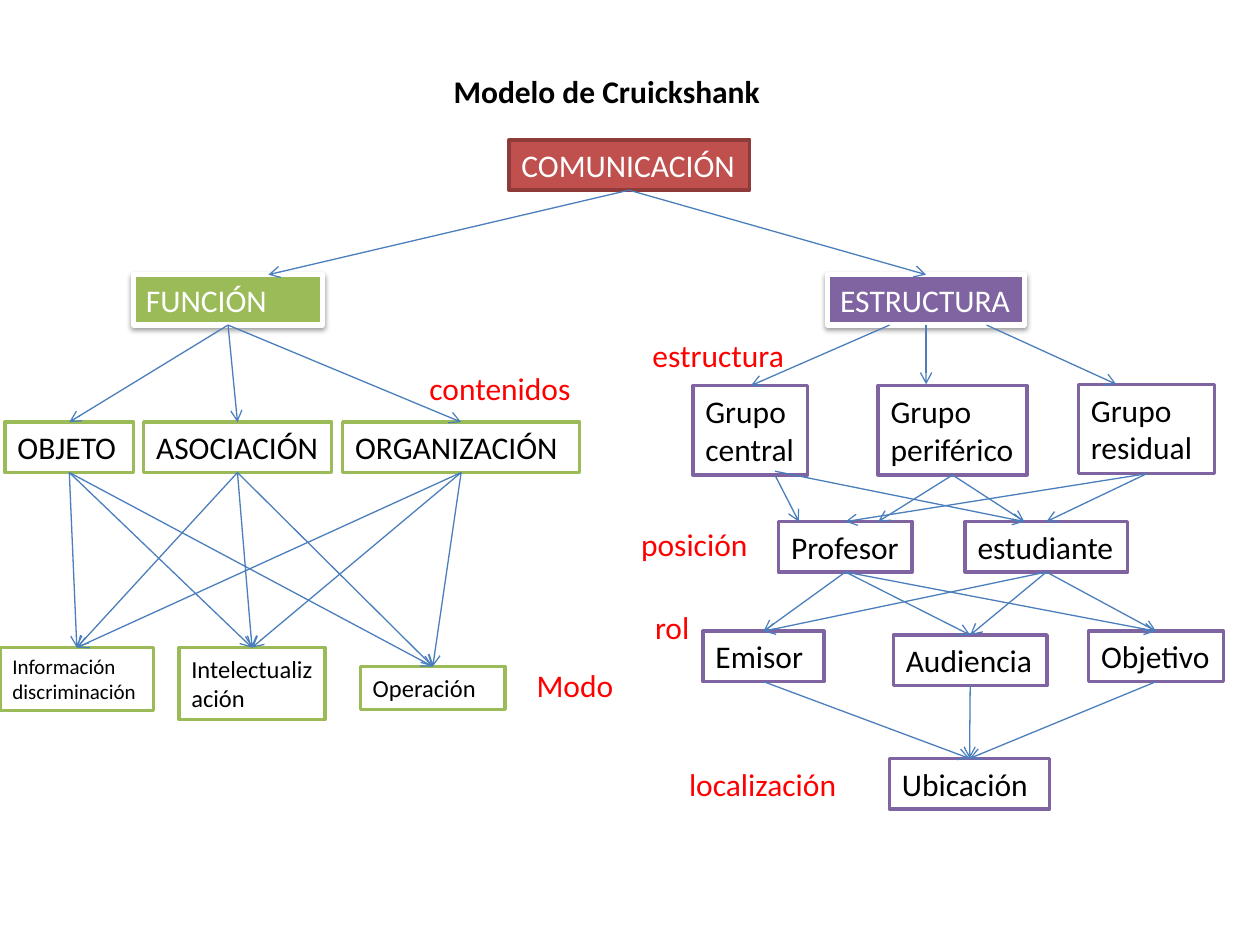
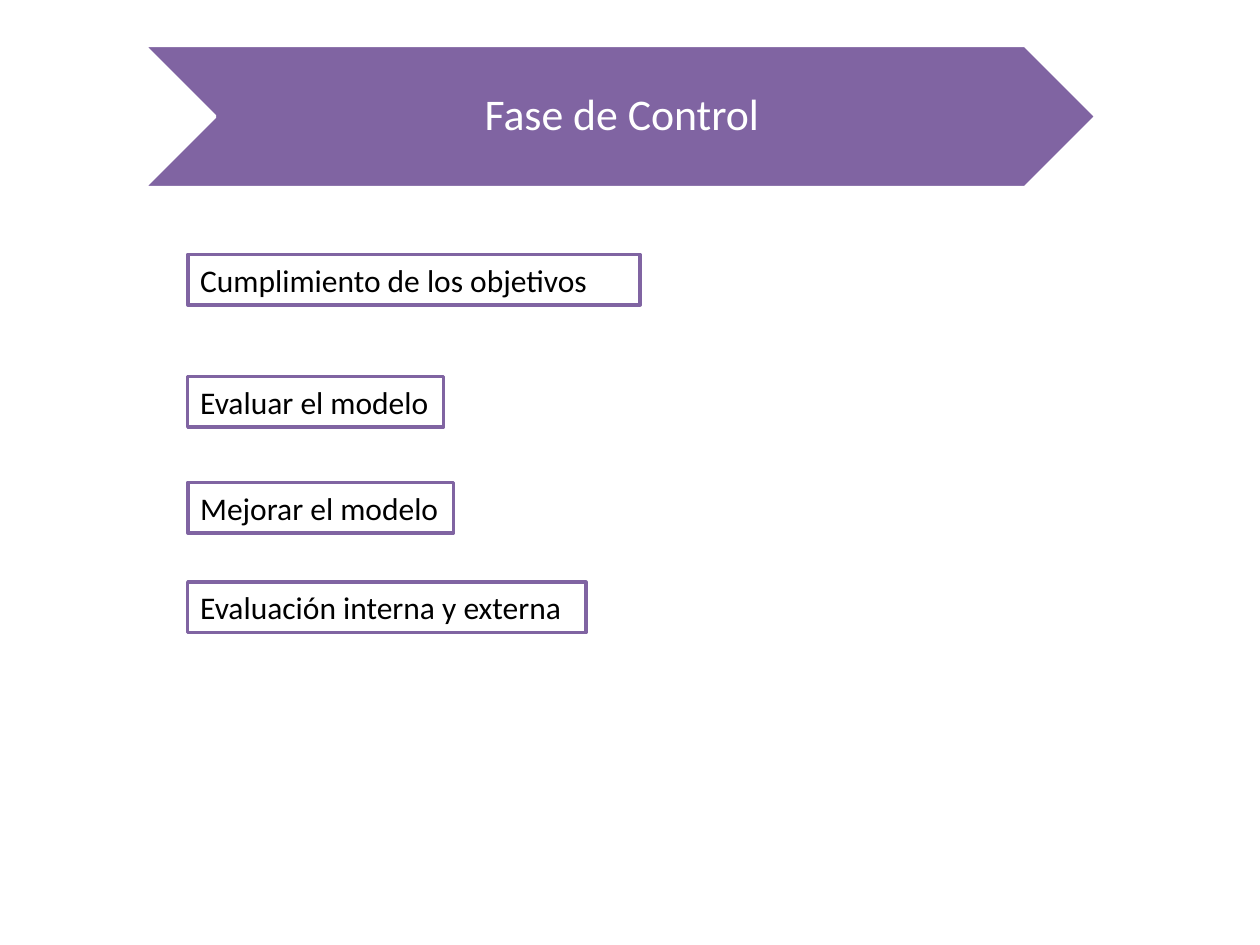
from itertools import product

from lxml import etree
from pptx import Presentation
from pptx.dml.color import RGBColor
from pptx.enum.shapes import MSO_CONNECTOR, MSO_SHAPE
from pptx.enum.text import MSO_ANCHOR, MSO_AUTO_SIZE as FIT, PP_ALIGN
from pptx.oxml.ns import qn
from pptx.util import Inches, Pt

COLORS = {
    "white": "FFFFFF", "black": "000000", "label": "FF0000",
    "red": "C0504D", "dark_red": "8E3B39", "green": "9BBB59",
    "purple": "8064A2", "arrow": "4B7EBC",
}
FONT = "Calibri"
LINE_H = 0.4
TOP, BOTTOM = 0, 2


def rgb(name):
    return RGBColor.from_string(COLORS[name])


def write(sp, text, size=18, color="black", bold=False, wrap=False, fit=FIT.SHAPE_TO_FIT_TEXT,
          align=PP_ALIGN.LEFT, anchor=MSO_ANCHOR.TOP, spacing=None):
    tf = sp.text_frame
    tf.word_wrap = wrap
    tf.auto_size = fit
    tf.vertical_anchor = anchor
    p = tf.paragraphs[0]
    p.alignment = align
    if spacing:
        p.line_spacing = spacing
    r = p.add_run()
    r.text = text
    font = r.font
    font.name, font.size, font.bold = FONT, Pt(size), bold
    font.color.rgb = rgb(color)


def place(sp, x, y, w, h):
    sp.left, sp.top, sp.width, sp.height = map(Inches, (x, y, w, h))


def add_title(s, text, at, **fmt):
    sp = s.shapes.title
    place(sp, *at)
    write(sp, text, **fmt)
    return sp


def add_preset(s, kind, at, fill, line, width=2):
    sp = s.shapes.add_shape(kind, *map(Inches, at))
    sp.shadow.inherit = False
    sp.fill.solid()
    sp.fill.fore_color.rgb = rgb(fill)
    if line:
        sp.line.color.rgb = rgb(line)
        sp.line.width = Pt(width)
    else:
        sp.line.fill.background()
    return sp


def add_box(s, text, x, y, w, h=LINE_H, fill="white", line="purple", width=2, **fmt):
    sp = add_preset(s, MSO_SHAPE.RECTANGLE, (x, y, w, h), fill, line, width)
    write(sp, text, **fmt)
    return sp


def add_heading(s, text, x, w, fill, wrap):
    sp = add_box(s, text, x, 2.18, w, fill=fill, line="white", width=3, color="white", wrap=wrap)
    effects = sp.element.spPr.find(qn("a:effectLst"))
    shadow = etree.SubElement(effects, qn("a:outerShdw"), blurRad=str(Pt(3.1)),
                              dist=str(Pt(1.6)), dir="5400000", rotWithShape="0")
    tint = etree.SubElement(shadow, qn("a:srgbClr"), val=COLORS["black"])
    etree.SubElement(tint, qn("a:alpha"), val="38000")
    return sp


def add_label(s, text, x, y, w):
    sp = s.shapes.add_textbox(*map(Inches, (x, y, w, LINE_H)))
    write(sp, text, color="label")


def add_arrow(s, x1=0, y1=0, x2=0, y2=0):
    c = s.shapes.add_connector(MSO_CONNECTOR.STRAIGHT, *map(Inches, (x1, y1, x2, y2)))
    c.line.color.rgb = rgb("arrow")
    c.line.width = Pt(0.75)
    etree.SubElement(c.line._get_or_add_ln(), qn("a:tailEnd"), type="arrow")
    etree.SubElement(c.element.spPr, qn("a:effectLst"))
    return c


def link_all(s, parents, children):
    for parent, child in product(parents, children):
        c = add_arrow(s)
        c.begin_connect(parent, BOTTOM)
        c.end_connect(child, TOP)


def build_function_branch(s):
    function = add_heading(s, "FUNCIÓN", 1.06, 1.5, "green", True)
    contents = [
        add_box(s, text, x, 3.35, w, line="green", wrap=wrap)
        for text, x, w, wrap in [
            ("OBJETO", 0.04, 1.02, True),
            ("ASOCIACIÓN", 1.14, 1.49, True),
            ("ORGANIZACIÓN", 2.72, 1.88, False),
        ]
    ]
    modes = [
        add_box(s, text, *at, line="green", size=size, wrap=True)
        for text, at, size in [
            ("Información discriminación", (0, 5.14, 1.22, 0.5), 12),
            ("Intelectualización", (1.42, 5.14, 1.16, 0.57), 14),
            ("Operación", (2.86, 5.29, 1.15, 0.34), 14),
        ]
    ]
    add_label(s, "contenidos", 3.31, 2.88, 1.39)
    add_box(s, "Modo", 4.16, 5.24, 0.88, line=None, color="label")
    link_all(s, [function], contents)
    link_all(s, contents, modes)


def build_structure_branch(s):
    structure = add_heading(s, "ESTRUCTURA", 6.57, 1.56, "purple", False)
    groups = [
        add_box(s, text, x, y, w, 0.71, wrap=True)
        for text, x, y, w in [
            ("Grupo central", 5.5, 3.06, 0.91),
            ("Grupo periférico", 6.97, 3.06, 1.18),
            ("Grupo residual", 8.56, 3.05, 1.08),
        ]
    ]
    positions = [
        add_box(s, "Profesor", 6.18, 4.14, 1.06),
        add_box(s, "estudiante", 7.66, 4.14, 1.29),
    ]
    roles = [
        add_box(s, "Emisor", 5.58, 5.01, 0.96),
        add_box(s, "Audiencia", 7.09, 5.04, 1.22),
        add_box(s, "Objetivo", 8.64, 5.01, 1.07),
    ]
    location = add_box(s, "Ubicación", 7.06, 6.02, 1.27)

    for ends in [
        (7.06, 2.58, 5.96, 3.06), (7.35, 2.58, 7.35, 3.05), (7.83, 2.58, 8.86, 3.05),
        (6.15, 3.77, 6.34, 4.14), (6.15, 3.74, 8.13, 4.14),
        (7.56, 3.77, 6.97, 4.14), (7.56, 3.77, 8.13, 4.14),
    ]:
        add_arrow(s, *ends)
    link_all(s, groups[2:], positions)
    link_all(s, positions, roles)
    link_all(s, roles, [location])

    for text, x, y, w in [
        ("estructura", 5.08, 2.62, 1.26),
        ("posición", 4.99, 4.12, 1.06),
        ("rol", 5.1, 4.78, 0.48),
        ("localización", 5.37, 6.02, 1.38),
    ]:
        add_label(s, text, x, y, w)
    return structure


def build_model_slide(s):
    add_title(s, "Modelo de Cruickshank", (3.5, 0.52, 2.65, LINE_H), bold=True)
    communication = add_box(s, "COMUNICACIÓN", 4.04, 1.11, 1.91, fill="red",
                            line="dark_red", color="white", wrap=True)
    build_function_branch(s)
    structure = build_structure_branch(s)
    add_arrow(s, 4.99, 1.51, 2.13, 2.18)
    link_all(s, [communication], [structure])


def build_control_slide(s):
    add_preset(s, MSO_SHAPE.CHEVRON, (1.14, 0.36, 7.56, 1.13), "purple", "white")
    title = add_title(s, "Fase de Control", (2.65, 0.36, 4.54, 1.13), size=25, color="white",
                      wrap=True, fit=FIT.NONE, align=PP_ALIGN.CENTER,
                      anchor=MSO_ANCHOR.MIDDLE, spacing=0.9)
    tf = title.text_frame
    tf.margin_left, tf.margin_right = Inches(0.03), 0
    tf.margin_top = tf.margin_bottom = Inches(0.02)
    s.shapes.element.append(title.element)

    for text, y, w, wrap in [
        ("Cumplimiento de los objetivos", 2.02, 3.59, True),
        ("Evaluar el modelo", 2.99, 2.03, False),
        ("Mejorar el modelo", 3.83, 2.11, False),
        ("Evaluación interna y externa", 4.62, 3.16, False),
    ]:
        add_box(s, text, 1.49, y, w, wrap=wrap)


def main():
    prs = Presentation()
    prs.slide_width, prs.slide_height = Inches(10), Inches(7.5)
    title_only = prs.slide_layouts[5]
    for build in (build_model_slide, build_control_slide):
        build(prs.slides.add_slide(title_only))
    prs.save("out.pptx")


if __name__ == "__main__":
    main()
